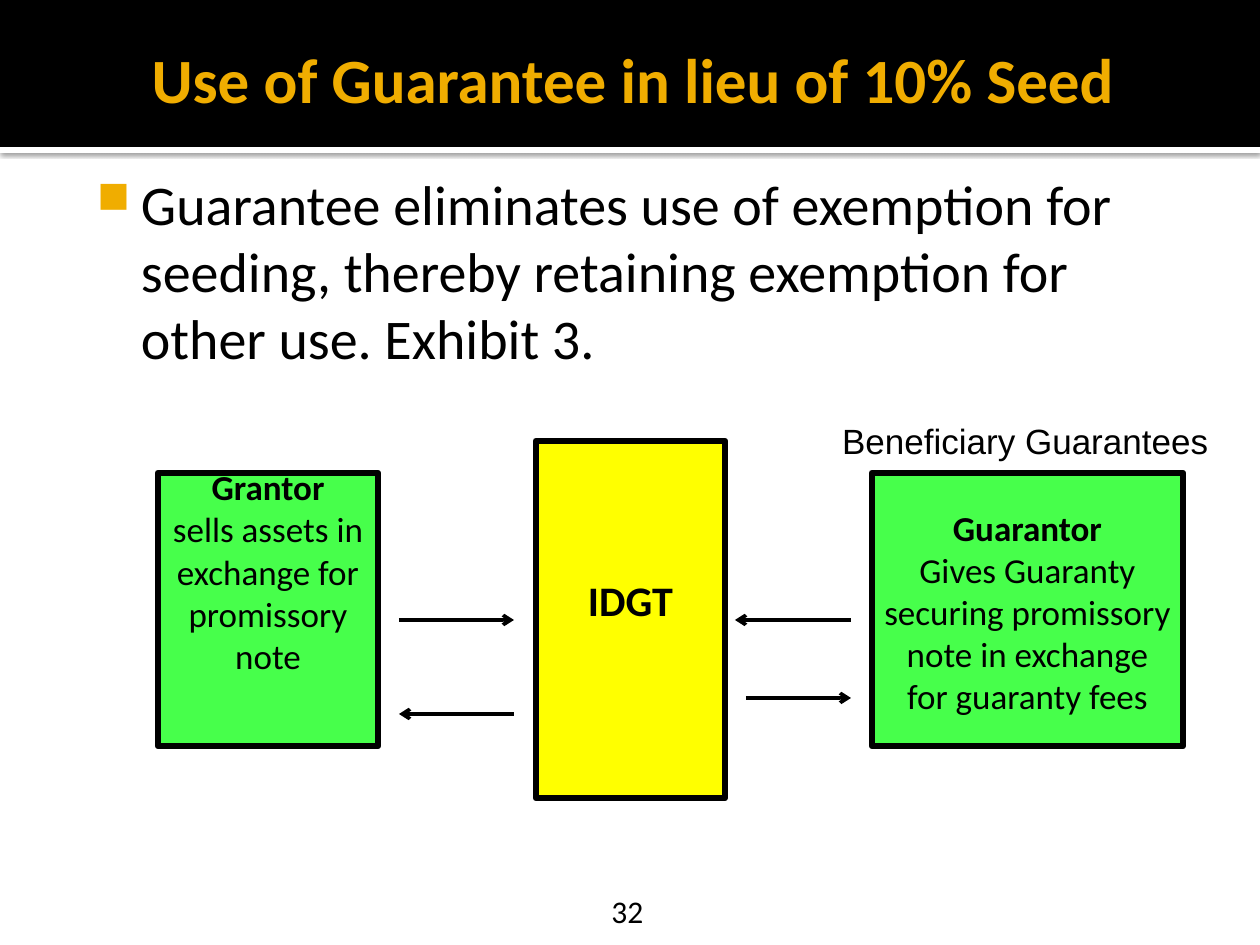
"""Build the slide on using a guarantee in lieu of a 10% seed gift."""
from dataclasses import dataclass

from lxml.etree import SubElement
from pptx import Presentation
from pptx.dml.color import RGBColor
from pptx.enum.shapes import MSO_CONNECTOR as Link, MSO_SHAPE as Shape
from pptx.enum.text import MSO_ANCHOR as Anchor, MSO_AUTO_SIZE as AutoSize, PP_ALIGN as Align
from pptx.oxml.ns import qn
from pptx.util import Emu, Pt

EMU_PER_PX = 914400 / 126
BLACK = RGBColor(0x00, 0x00, 0x00)
WHITE = RGBColor(0xFF, 0xFF, 0xFF)
GOLD = RGBColor(0xF0, 0xAD, 0x00)
GREEN = RGBColor(0x47, 0xFF, 0x4B)
YELLOW = RGBColor(0xFF, 0xFF, 0x00)


def px(length: int) -> Emu:
    """Turn a length in pixels into EMU."""
    return Emu(round(length * EMU_PER_PX))


@dataclass(frozen=True)
class Area:
    """A rectangle on the slide in pixels."""
    left: int
    top: int
    width: int
    height: int

    def emu(self) -> list[Emu]:
        """Return the four lengths in EMU."""
        return [px(side) for side in (self.left, self.top, self.width, self.height)]


@dataclass(frozen=True)
class Line:
    """One paragraph of text and its look."""
    text: str
    size: int
    bold: bool = False
    color: RGBColor = BLACK
    align: Align = Align.CENTER
    name: str = "Calibri"


@dataclass(frozen=True)
class Party:
    """A bordered box for one party to the sale."""
    area: Area
    fill: RGBColor
    lines: tuple[Line, ...]
    inset_top: int = 6
    inset_bottom: int = 6


@dataclass(frozen=True)
class Arrow:
    """A level arrow between two parties."""
    start: int
    end: int
    y: int


@dataclass(frozen=True)
class Label:
    """A plain text box with insets as left, top, right, bottom."""
    area: Area
    line: Line
    anchor: Anchor = Anchor.TOP
    insets: tuple[int, int, int, int] = (12, 6, 12, 6)
    wrap: bool = True


PARTIES = (
    Party(Area(872, 473, 311, 273), GREEN, (
        Line("Guarantor", 20, True),
        Line("Gives Guaranty securing promissory note in exchange for guaranty fees", 20),
    ), 49, 45),
    Party(Area(158, 473, 220, 273), GREEN, (
        Line("Grantor", 20, True),
        Line("sells assets in exchange for promissory note", 20),
    ), 6, 83),
    Party(Area(536, 441, 189, 357), YELLOW, (Line("IDGT", 24, True),), 6, 45),
)
ARROWS = (
    Arrow(399, 514, 620),
    Arrow(514, 399, 714),
    Arrow(851, 735, 620),
    Arrow(746, 851, 698),
)
TITLE = Label(Area(63, 21, 1134, 115),
              Line("Use of Guarantee in lieu of 10% Seed", 36, True, GOLD),
              Anchor.MIDDLE, (12, 6, 6, 6))
POINT = Label(Area(73, 157, 1124, 672),
              Line("Guarantee eliminates use of exemption for seeding, thereby retaining "
                   "exemption for other use. Exhibit 3.", 32, align=Align.LEFT),
              insets=(8, 12, 12, 6))
CAPTION = Label(Area(830, 413, 394, 55),
                Line("Beneficiary Guarantees", 20, align=Align.LEFT, name="Arial"), wrap=False)
NUMBER = Label(Area(577, 892, 101, 38), Line("32", 18), Anchor.BOTTOM, (12, 6, 12, 0))


def set_values(target, values: dict) -> None:
    """Set each named attribute on the target."""
    for name, value in values.items():
        setattr(target, name, value)


def write_line(para, line: Line) -> None:
    """Write one line of text into a paragraph."""
    para.alignment = line.align
    span = para.add_run()
    span.text = line.text
    set_values(span.font, {"name": line.name, "size": Pt(line.size), "bold": line.bold})
    span.font.color.rgb = line.color


def add_rectangle(slide, area: Area, fill: RGBColor):
    """Add a filled rectangle without border or shadow."""
    box = slide.shapes.add_shape(Shape.RECTANGLE, *area.emu())
    box.shadow.inherit = False
    box.fill.solid()
    box.fill.fore_color.rgb = fill
    box.line.fill.background()
    return box


def add_header(slide) -> None:
    """Add the black band and the shadowed white rule under it."""
    rule = add_rectangle(slide, Area(0, 147, 1260, 6), WHITE)
    effects = rule.element.spPr.find(qn("a:effectLst"))
    shadow = SubElement(effects, qn("a:outerShdw"), blurRad=str(Pt(2.5)), dist=str(Pt(0.8)),
                        dir="5400000", algn="tl", rotWithShape="0")
    color = SubElement(shadow, qn("a:srgbClr"), val=str(BLACK))
    SubElement(color, qn("a:alpha"), val="60000")
    add_rectangle(slide, Area(0, 0, 1260, 147), BLACK)


def add_party(slide, party: Party) -> None:
    """Add a party's box with its lines of text."""
    box = add_rectangle(slide, party.area, party.fill)
    box.line.color.rgb = BLACK
    box.line.width = Pt(3.78)
    frame = box.text_frame
    set_values(frame, {"word_wrap": True, "vertical_anchor": Anchor.MIDDLE,
                       "margin_left": px(12), "margin_right": px(12),
                       "margin_top": px(party.inset_top),
                       "margin_bottom": px(party.inset_bottom)})
    for index, line in enumerate(party.lines):
        write_line(frame.add_paragraph() if index else frame.paragraphs[0], line)


def add_arrow(slide, arrow: Arrow) -> None:
    """Add a black line with an open arrowhead at its end."""
    y = px(arrow.y)
    link = slide.shapes.add_connector(Link.STRAIGHT, px(arrow.start), y, px(arrow.end), y)
    link.line.color.rgb = BLACK
    link.line.width = Pt(2)
    properties = link.element.spPr
    SubElement(properties.find(qn("a:ln")), qn("a:tailEnd"), type="arrow")
    SubElement(properties, qn("a:effectLst"))


def add_label(slide, label: Label, bullet: bool = False) -> None:
    """Add a text box, with a square gold bullet if asked."""
    frame = slide.shapes.add_textbox(*label.area.emu()).text_frame
    left, top, right, bottom = map(px, label.insets)
    set_values(frame, {"word_wrap": label.wrap, "vertical_anchor": label.anchor,
                       "margin_left": left, "margin_top": top,
                       "margin_right": right, "margin_bottom": bottom,
                       "auto_size": AutoSize.NONE if label.wrap else AutoSize.SHAPE_TO_FIT_TEXT})
    para = frame.paragraphs[0]
    if bullet:
        properties = para._p.get_or_add_pPr()
        set_values(properties, {})
        properties.set("marL", str(px(60)))
        properties.set("indent", str(px(-44)))
        color = SubElement(properties, qn("a:buClr"))
        SubElement(color, qn("a:srgbClr"), val=str(GOLD))
        SubElement(properties, qn("a:buSzPct"), val="80000")
        SubElement(properties, qn("a:buChar"), char="■")
    write_line(para, label.line)


def main() -> None:
    """Build and save the deck."""
    deck = Presentation()
    set_values(deck, {"slide_width": px(1260), "slide_height": px(945)})
    slide = deck.slides.add_slide(deck.slide_layouts[6])
    add_header(slide)
    for label in (NUMBER, TITLE, CAPTION):
        add_label(slide, label)
    add_label(slide, POINT, bullet=True)
    for party in PARTIES:
        add_party(slide, party)
    for arrow in ARROWS:
        add_arrow(slide, arrow)
    deck.save("out.pptx")


if __name__ == "__main__":
    main()
